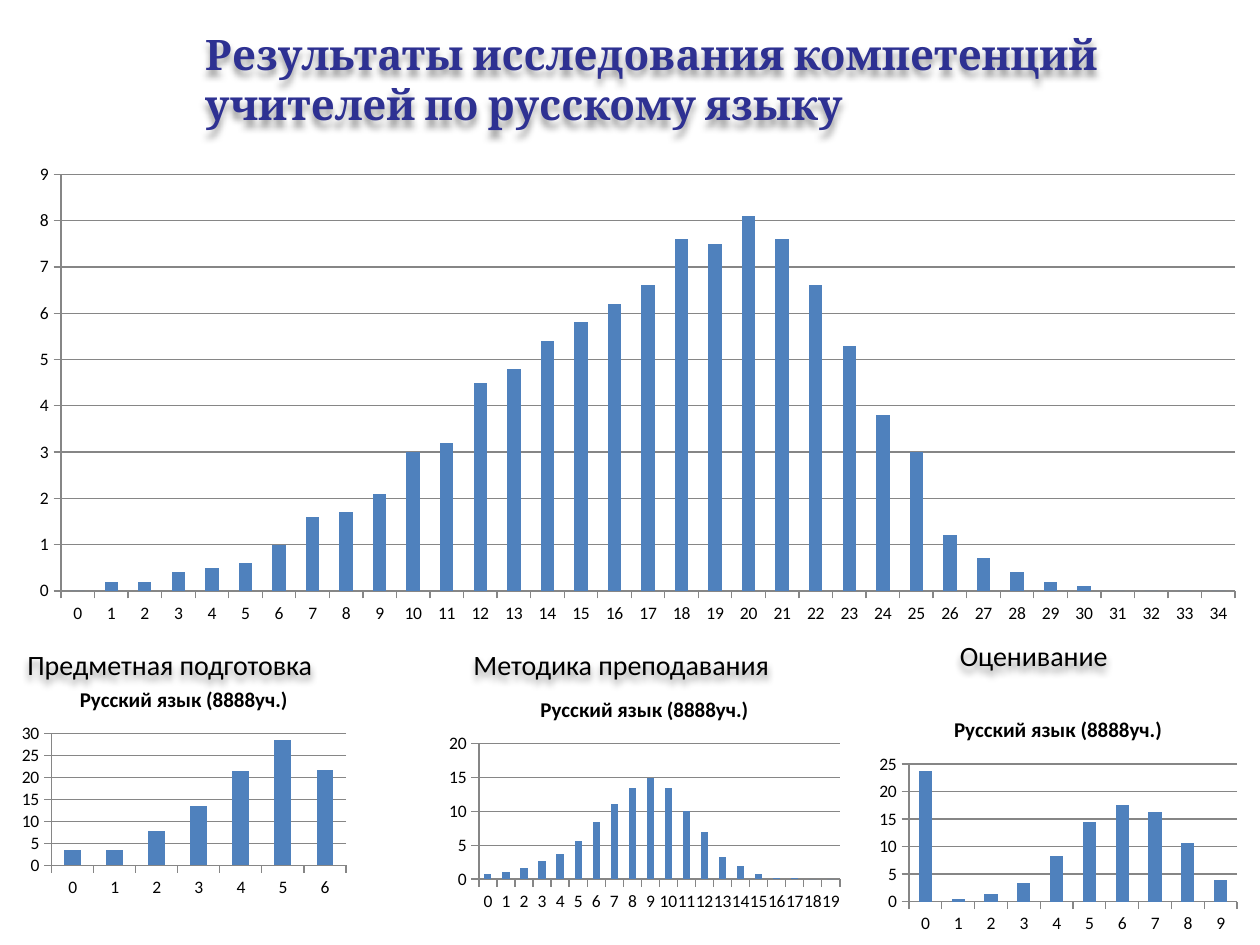
from lxml.etree import SubElement
from pptx import Presentation
from pptx.chart.data import CategoryChartData
from pptx.dml.color import RGBColor
from pptx.enum.chart import XL_CHART_TYPE, XL_TICK_MARK
from pptx.enum.text import MSO_ANCHOR
from pptx.oxml import parse_xml
from pptx.oxml.ns import nsdecls, qn
from pptx.util import Pt

NAVY = RGBColor(0x2E, 0x31, 0x92)
BLACK = RGBColor(0, 0, 0)
BLUE = RGBColor(0x4F, 0x81, 0xBD)
GREY = RGBColor(0x86, 0x86, 0x86)

TITLE = "Результаты исследования компетенций учителей по русскому языку"
TITLE_FORMAT = {"name": "Cambria", "size": Pt(24), "bold": True}
LABEL_FORMAT = {"name": "Calibri", "size": Pt(16), "bold": False}
AXIS_FORMAT = {"name": "Calibri", "size": Pt(10), "bold": False}
CHART_TITLE_FORMAT = {"name": "Calibri", "size": Pt(12), "bold": True}
CHART_TITLE = "Русский язык (8888уч.)"

LABELS = [
    ("Предметная подготовка", (8.6, 366.5, 221, 26.6)),
    ("Методика преподавания", (263.5, 366.5, 221, 26.6)),
    ("Оценивание", (541.4, 361.4, 136, 26.6)),
]

SECTION_CHARTS = [
    ((8.6, 383, 193, 132.5), 30, 5, [3.4, 3.5, 7.8, 13.5, 21.5, 28.5, 21.7]),
    ((252, 388.8, 232.6, 134.6), 20, 5,
     [0.7, 1.1, 1.6, 2.6, 3.7, 5.6, 8.5, 11.1, 13.5, 14.9,
      13.5, 10.1, 7, 3.3, 1.9, 0.7, 0.2, 0.1, 0, 0]),
    ((498.2, 400.3, 213, 136), 25, 5,
     [23.7, 0.4, 1.4, 3.3, 8.3, 14.5, 17.5, 16.3, 10.6, 4]),
]

TOTAL_PLACE = (8.6, 88.6, 711.4, 272.9)
TOTAL_VALUES = [
    0, 0.2, 0.2, 0.4, 0.5, 0.6, 1, 1.6, 1.7, 2.1, 3, 3.2,
    4.5, 4.8, 5.4, 5.8, 6.2, 6.6, 7.6, 7.5, 8.1, 7.6, 6.6, 5.3,
    3.8, 3, 1.2, 0.7, 0.4, 0.2, 0.1, 0, 0, 0, 0,
]


def format_font(font, values, color):
    for name, value in values.items():
        setattr(font, name, value)
    font.color.rgb = color


def add_shadow(box):
    box.element.spPr.append(parse_xml(
        f'<a:effectLst {nsdecls("a")}>'
        '<a:outerShdw blurRad="50800" dist="38100" dir="5400000">'
        '<a:srgbClr val="000000"><a:alpha val="40000"/></a:srgbClr>'
        '</a:outerShdw></a:effectLst>'))


def add_text(page, text, place, values, color, anchor=MSO_ANCHOR.TOP):
    box = page.shapes.add_textbox(*map(Pt, place))
    box.text_frame.word_wrap = True
    box.text_frame.vertical_anchor = anchor
    span = box.text_frame.paragraphs[0].add_run()
    span.text = text
    format_font(span.font, values, color)
    add_shadow(box)


def clear_background(chart):
    area = parse_xml(
        f'<c:spPr {nsdecls("c", "a")}><a:noFill/><a:ln><a:noFill/></a:ln></c:spPr>')
    chart.element.find(qn("c:chart")).addnext(area) if hasattr(chart, "element") \
        else chart._chartSpace.find(qn("c:chart")).addnext(area)


def show_every_category(axis):
    element = axis._element
    skip = SubElement(element, qn("c:tickLblSkip"), val="1")
    element.find(qn("c:noMultiLvlLbl")).addprevious(skip)


def format_axes(chart, maximum, step):
    for axis in (chart.category_axis, chart.value_axis):
        axis.major_tick_mark = XL_TICK_MARK.OUTSIDE
        axis.minor_tick_mark = XL_TICK_MARK.NONE
        axis.format.line.color.rgb = GREY
        axis.format.line.width = Pt(0.75)
    scale = {"minimum_scale": 0, "maximum_scale": maximum,
             "major_unit": step, "has_major_gridlines": True}
    for name, value in scale.items():
        setattr(chart.value_axis, name, value)
    grid = chart.value_axis.major_gridlines.format.line
    grid.color.rgb = GREY
    grid.width = Pt(0.75)
    show_every_category(chart.category_axis)


def add_histogram(page, place, maximum, step, values, title=None):
    data = CategoryChartData()
    data.categories = [str(score) for score in range(len(values))]
    data.add_series("Series 1", values)
    chart = page.shapes.add_chart(
        XL_CHART_TYPE.COLUMN_CLUSTERED, *map(Pt, place), data).chart
    format_font(chart.font, AXIS_FORMAT, BLACK)
    chart.has_legend = False
    chart.has_title = title is not None
    if title:
        span = chart.chart_title.text_frame.paragraphs[0].add_run()
        span.text = title
        format_font(span.font, CHART_TITLE_FORMAT, BLACK)
        chart.chart_title.include_in_layout = False
    plot = chart.plots[0]
    plot.vary_by_categories = False
    plot.gap_width = 150
    fill = plot.series[0].format.fill
    fill.solid()
    fill.fore_color.rgb = BLUE
    format_axes(chart, maximum, step)
    clear_background(chart)


def main():
    deck = Presentation()
    deck.slide_width, deck.slide_height = Pt(720), Pt(540)
    page = deck.slides.add_slide(deck.slide_layouts[6])
    add_text(page, TITLE, (110.2, 12.2, 609.8, 65.5), TITLE_FORMAT, NAVY,
             MSO_ANCHOR.MIDDLE)
    for text, place in LABELS:
        add_text(page, text, place, LABEL_FORMAT, BLACK)
    for place, maximum, step, values in SECTION_CHARTS:
        add_histogram(page, place, maximum, step, values, CHART_TITLE)
    add_histogram(page, TOTAL_PLACE, 9, 1, TOTAL_VALUES)
    deck.save("out.pptx")


if __name__ == "__main__":
    main()
